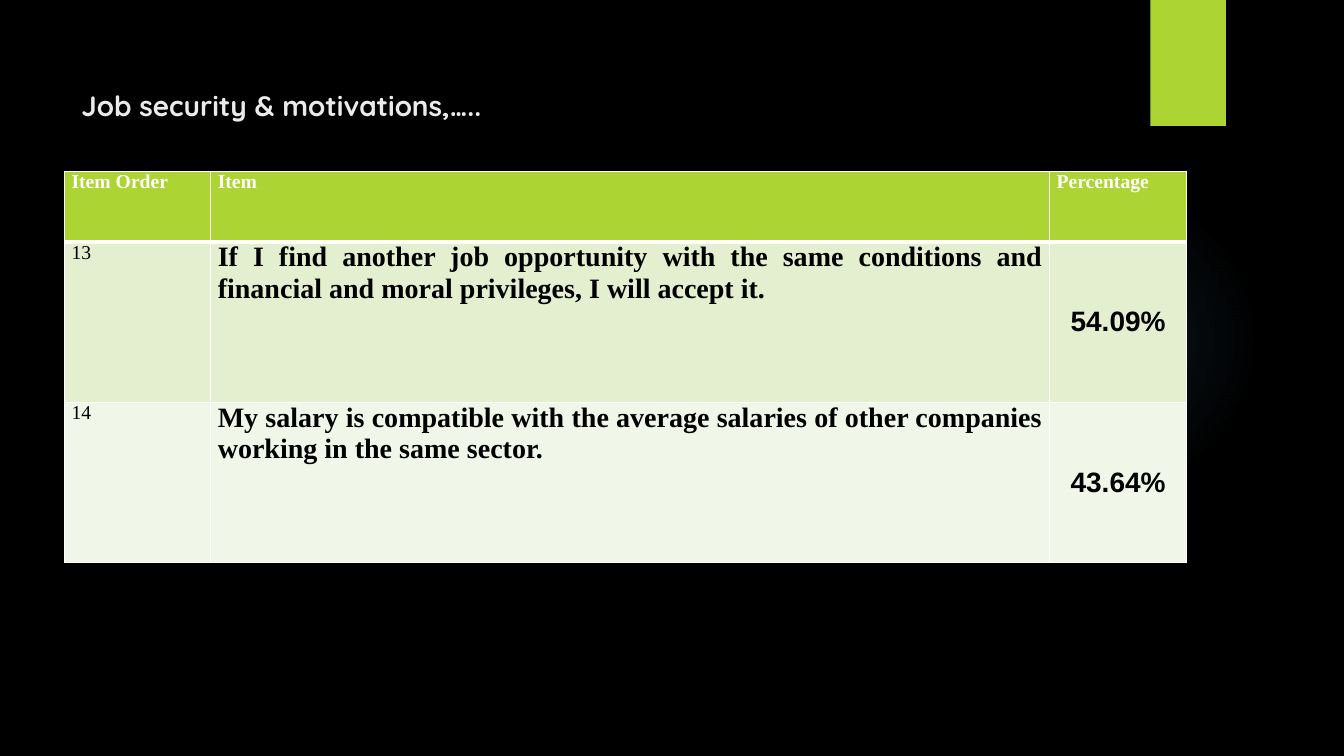
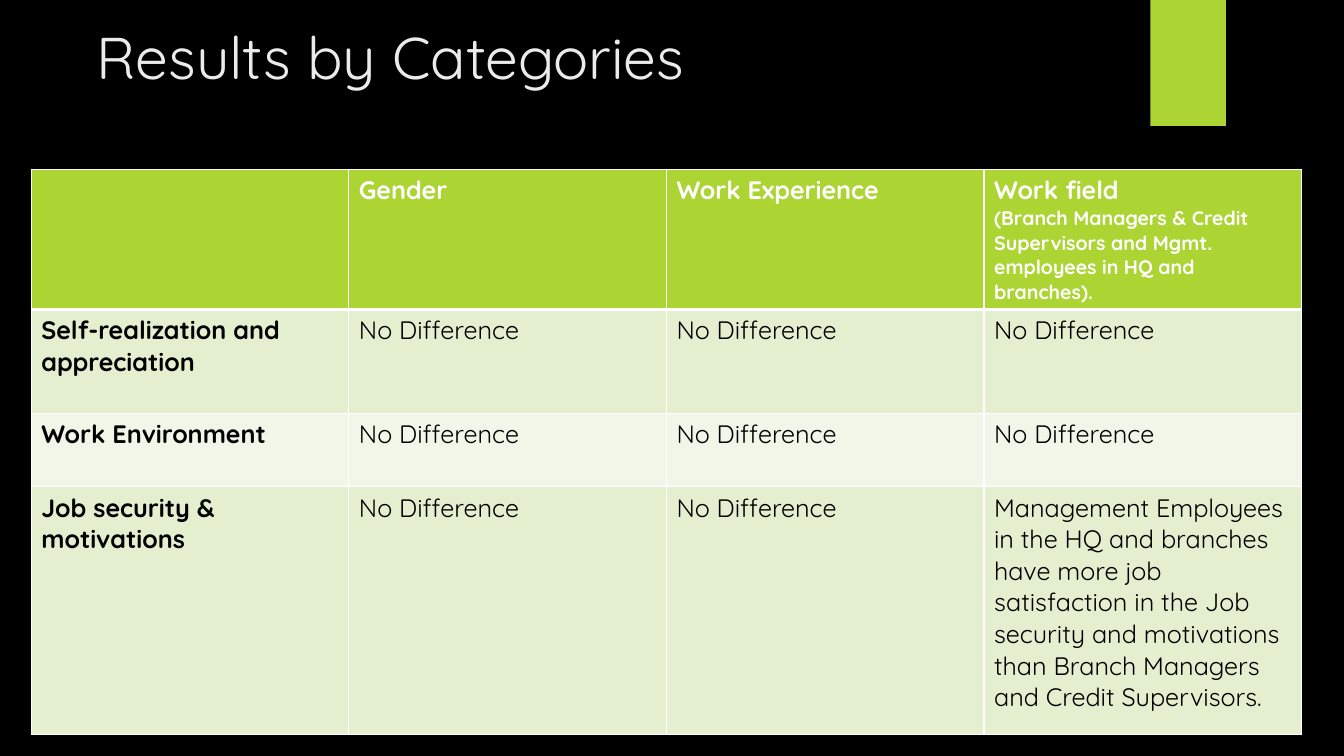
from dataclasses import dataclass

from lxml import etree
from pptx import Presentation
from pptx.dml.color import RGBColor
from pptx.enum.shapes import MSO_SHAPE
from pptx.enum.text import MSO_ANCHOR, PP_ALIGN
from pptx.oxml import parse_xml
from pptx.oxml.ns import qn
from pptx.util import Inches, Pt

OVAL, RECT = MSO_SHAPE.OVAL, MSO_SHAPE.RECTANGLE
TOP, MIDDLE = MSO_ANCHOR.TOP, MSO_ANCHOR.MIDDLE
LEFT, CENTER, JUSTIFY = PP_ALIGN.LEFT, PP_ALIGN.CENTER, PP_ALIGN.JUSTIFY
DRAWING_NS = "http://schemas.openxmlformats.org/drawingml/2006/main"


@dataclass(frozen=True)
class Theme:
    background: str = "000000"
    accent: str = "ACD433"
    bands: tuple = ("E3EFCE", "F1F7E8")
    glow: str = "7AC4F0"
    title: str = "EBEBEB"
    light: str = "FFFFFF"
    dark: str = "000000"
    sans: str = "Quicksand"
    serif: str = "Times New Roman"
    figures: str = "Calibri"
    figures_rtl: str = "Arial"
    heading: int = 42
    subheading: int = 20
    statement: int = 20
    body: int = 18
    small: int = 14


THEME = Theme()


@dataclass(frozen=True)
class Style:
    size: int = THEME.body
    bold: bool = False
    font: str = THEME.sans
    color: str = THEME.dark
    align: int = LEFT
    anchor: int = TOP
    after: int = 0
    insets: tuple = (0.1, 0.05)
    rtl: bool = False


def rgb(value):
    return RGBColor.from_string(value)


def add_run(p, text, style):
    r = p.add_run()
    r.text = text
    r.font.size = Pt(style.size)
    r.font.bold = style.bold
    r.font.name = style.font
    r.font.color.rgb = rgb(style.color)
    if style.rtl:
        cs = etree.SubElement(r.font._element, qn("a:cs"))
        cs.set("typeface", THEME.figures_rtl)


def fill_paragraph(p, text, style):
    p.alignment = style.align
    p.space_after = Pt(style.after)
    if style.rtl:
        p._p.get_or_add_pPr().set("rtl", "1")
    add_run(p, text, style)


def add_plain_shape(slide, kind, x, y, w, h):
    sp = slide.shapes.add_shape(kind, Inches(x), Inches(y), Inches(w), Inches(h))
    sp.shadow.inherit = False
    sp.line.fill.background()
    return sp


def add_glow(slide):
    sp = add_plain_shape(slide, OVAL, 9.41, 1.83, 3.08, 3.08)
    stops = "".join(
        f'<a:gs pos="{pos * 1000}"><a:srgbClr val="{THEME.glow}">'
        f'<a:alpha val="{alpha * 1000}"/></a:srgbClr></a:gs>'
        for pos, alpha in ((0, 7), (36, 6), (69, 0))
    )
    gradient = parse_xml(
        f'<a:gradFill xmlns:a="{DRAWING_NS}" rotWithShape="1"><a:gsLst>{stops}</a:gsLst>'
        '<a:path path="circle"><a:fillToRect l="50000" t="50000" r="50000" b="50000"/>'
        "</a:path></a:gradFill>"
    )
    sp._element.spPr.find(qn("a:prstGeom")).addnext(gradient)


def add_slide(prs):
    slide = prs.slides.add_slide(prs.slide_layouts[6])
    add_glow(slide)
    tab = add_plain_shape(slide, RECT, 11.41, 0, 0.75, 1.25)
    tab.fill.solid()
    tab.fill.fore_color.rgb = rgb(THEME.accent)
    return slide


def add_title(slide, text, x, y, h, size, bold=False):
    box = slide.shapes.add_textbox(Inches(x), Inches(y), Inches(10.29), Inches(h))
    tf = box.text_frame
    tf.word_wrap = True
    fill_paragraph(tf.paragraphs[0], text, Style(size, bold, color=THEME.title))


def set_borders(cell, top, bottom):
    tc_pr = cell._tc.get_or_add_tcPr()
    for side, width in (("L", 1), ("R", 1), ("T", top), ("B", bottom)):
        ln = etree.SubElement(tc_pr, qn(f"a:ln{side}"), w=str(Pt(width)))
        solid = etree.SubElement(ln, qn("a:solidFill"))
        etree.SubElement(solid, qn("a:srgbClr"), val=THEME.light)


def fill_cell(cell, content, style):
    cell.margin_left = cell.margin_right = Inches(style.insets[0])
    cell.margin_top = cell.margin_bottom = Inches(style.insets[1])
    cell.vertical_anchor = style.anchor
    tf = cell.text_frame
    lines = content if isinstance(content, list) else [(content, style)]
    for i, (text, line_style) in enumerate(lines):
        p = tf.add_paragraph() if i else tf.paragraphs[0]
        if text:
            fill_paragraph(p, text, line_style)


def add_grid(slide, x, y, widths, heights, rows, header_style, column_styles):
    frame = slide.shapes.add_table(
        len(rows), len(widths), Inches(x), Inches(y),
        Inches(sum(widths)), Inches(sum(heights)),
    )
    table = frame.table
    table.horz_banding = False
    for column, width in zip(table.columns, widths):
        column.width = Inches(width)
    for i, (row, height) in enumerate(zip(rows, heights)):
        table.rows[i].height = Inches(height)
        color = THEME.bands[(i - 1) % 2] if i else THEME.accent
        for j, content in enumerate(row):
            cell = table.cell(i, j)
            set_borders(cell, 3 if i == 1 else 1, 1 if i else 3)
            cell.fill.solid()
            cell.fill.fore_color.rgb = rgb(color)
            fill_cell(cell, content, column_styles[j] if i else header_style)


def build_job_security(prs):
    slide = add_slide(prs)
    add_title(slide, "Job security & motivations,…..", 0.71, 0.83, 0.5,
              THEME.subheading, bold=True)
    tight = (0.07, 0)
    header = Style(THEME.small, True, THEME.serif, THEME.light, JUSTIFY, TOP, 6, tight)
    order = Style(THEME.small, False, THEME.serif, THEME.dark, JUSTIFY, TOP, 6, tight)
    item = Style(THEME.statement, True, THEME.serif, THEME.dark, JUSTIFY, TOP, 6, tight)
    percentage = Style(THEME.statement, True, THEME.figures, THEME.dark, CENTER,
                       MIDDLE, 0, tight, True)
    rows = [
        ("Item Order", "Item", "Percentage"),
        ("13", "If I find another job opportunity with the same conditions and "
               "financial and moral privileges, I will accept it.", "54.09%"),
        ("14", "My salary is compatible with the average salaries of other "
               "companies working in the same sector.", "43.64%"),
    ]
    add_grid(slide, 0.64, 1.7, [1.45, 8.32, 1.36], [0.7, 1.59, 1.59], rows,
             header, [order, item, percentage])


def build_categories(prs):
    slide = add_slide(prs)
    add_title(slide, "Results by Categories", 0.86, 0.16, 1.53, THEME.heading)
    header = Style(bold=True, color=THEME.light)
    note = Style(THEME.small, True, color=THEME.light)
    same = "No Difference"
    rows = [
        ("", "Gender", "Work Experience", [
            ("Work field", header),
            ("(Branch Managers & Credit Supervisors and Mgmt. employees in HQ "
             "and branches).", note),
        ]),
        ("Self-realization and appreciation", same, same, same),
        ("Work Environment", same, same, same),
        ("Job security & motivations", same, same,
         "Management Employees in the HQ and branches have more job satisfaction "
         "in the Job security and motivations than Branch Managers and Credit "
         "Supervisors."),
    ]
    add_grid(slide, 0.31, 1.68, [3.15] * 4, [1.39, 1.03, 0.73, 2.46], rows,
             header, [Style(bold=True)] + [Style()] * 3)


def main():
    prs = Presentation()
    prs.slide_width, prs.slide_height = Inches(13.33), Inches(7.5)
    backdrop = prs.slide_master.background.fill
    backdrop.solid()
    backdrop.fore_color.rgb = rgb(THEME.background)
    build_job_security(prs)
    build_categories(prs)
    prs.save("out.pptx")


if __name__ == "__main__":
    main()
